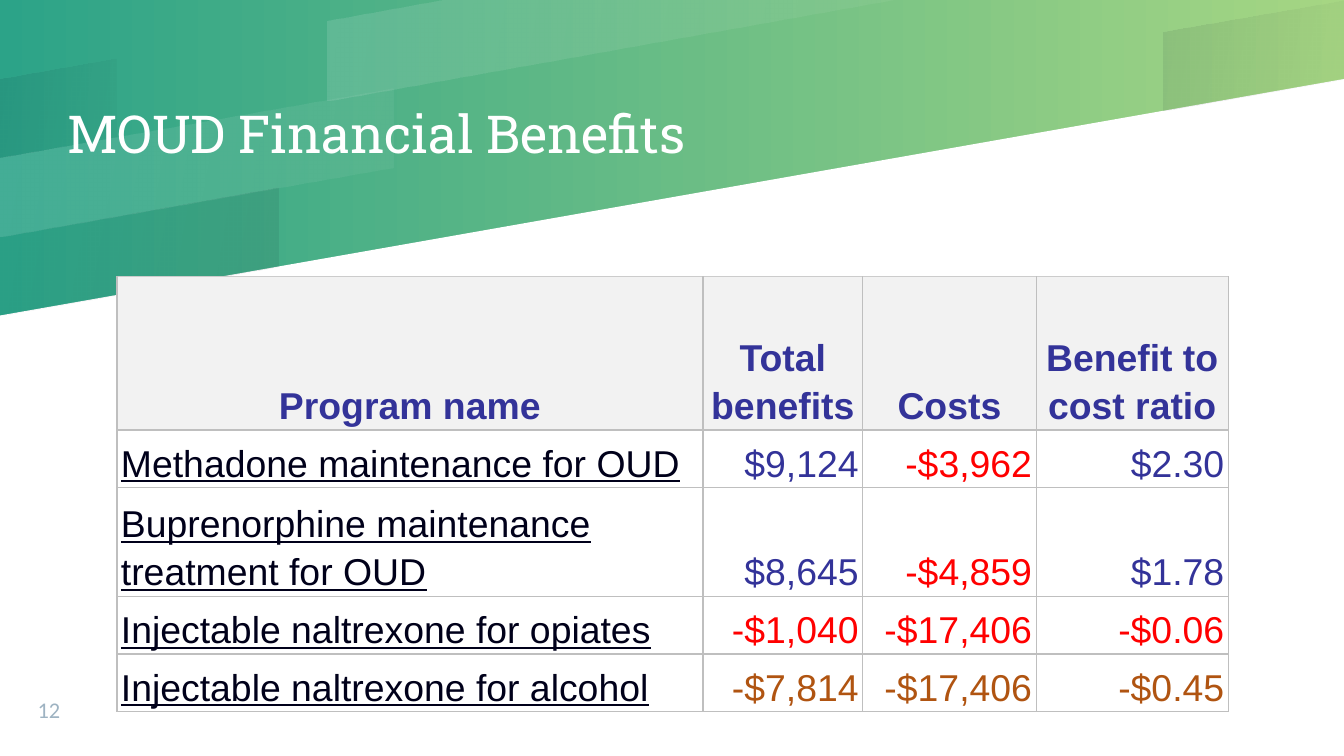
from pptx import Presentation
from pptx.dml.color import RGBColor
from pptx.enum.text import MSO_ANCHOR, PP_ALIGN
from pptx.oxml import parse_xml
from pptx.oxml.ns import nsdecls
from pptx.util import Inches, Pt
from lxml.etree import SubElement

# Content
TITLE = "MOUD Financial Benefits"
PAGE = "12"
HEADERS = ["Program name", "Total benefits", "Costs", "Benefit to cost ratio"]
PROGRAMS = [
    ("Methadone maintenance for OUD", "$9,124", "-$3,962", "$2.30"),
    ("Buprenorphine maintenance treatment for OUD", "$8,645", "-$4,859", "$1.78"),
    ("Injectable naltrexone for opiates", "-$1,040", "-$17,406", "-$0.06"),
    ("Injectable naltrexone for alcohol", "-$7,814", "-$17,406", "-$0.45"),
]

TEAL = RGBColor(0x2C, 0xA3, 0x88)
LIME = RGBColor(0xA6, 0xD6, 0x83)
WHITE = RGBColor(0xFF, 0xFF, 0xFF)
INK = RGBColor(0x00, 0x00, 0x1A)
NAVY = RGBColor(0x33, 0x33, 0x99)
RED = RGBColor(0xFF, 0x00, 0x00)
BROWN = RGBColor(0xB0, 0x54, 0x11)
PALE = RGBColor(0xF2, 0xF2, 0xF2)
GREY_BLUE = RGBColor(0x9E, 0xB3, 0xC2)
RULE, TOP_RULE = "BFBFBF", "CCCCCC"

# Sizes in inches
WIDTH, HEIGHT = 10, 5.625
LANE, SLOPE = 0.587, 0.176   # diagonal lanes rising to the right
COLS = [4.36, 1.19, 1.29, 1.43]
ROWS = [1.14, 0.43, 0.79, 0.43, 0.43]

# Diagonal bands: lane, left, right, colour, opacity % at both ends
BANDS = [
    (1, 2.44, 6.65, WHITE, (12, 5)),
    (1, 0, 0.87, INK, (8, 2)),
    (3, 0, 2.07, INK, (2, 8)),
    (3, 8.66, WIDTH, INK, (8, 2)),
    (2, 0, 2.93, WHITE, (12, 5)),
]


def write(tf, text, size=20, font="Arial", color=NAVY, bold=False,
          underline=False, align=PP_ALIGN.LEFT, spacing=1.0):
    p = tf.paragraphs[0]
    p.alignment, p.line_spacing = align, spacing
    r = p.add_run()
    r.text = text
    r.font.size, r.font.name = Pt(size), font
    r.font.bold, r.font.underline = bold, underline
    r.font.color.rgb = color
    return r


def set_frame(tf, anchor):
    tf.word_wrap = True
    tf.vertical_anchor = anchor
    tf.margin_left = tf.margin_right = tf.margin_top = tf.margin_bottom = 0


def set_gradient(fill, colors, angle):
    fill.gradient()
    fill.gradient_angle = angle
    for stop, color in zip(fill.gradient_stops, colors):
        stop.color.rgb = color


def lane_y(lane, x):
    return max(0, lane * LANE - SLOPE * x)


def draw_polygon(s, points):
    points = [(Inches(x), Inches(y)) for x, y in points]
    builder = s.shapes.build_freeform(*points[0])
    builder.add_line_segments(points[1:], close=True)
    sp = builder.convert_to_shape()
    sp.shadow.inherit = False
    sp.line.fill.background()
    return sp


def draw_band(s, lane, left, right, color, opacities):
    bend = min(right, lane * LANE / SLOPE)   # upper edge meets the slide top
    sp = draw_polygon(s, [
        (left, lane_y(lane, left)), (bend, lane_y(lane, bend)),
        (right, lane_y(lane, right)), (right, lane_y(lane + 1, right)),
        (left, lane_y(lane + 1, left))])
    set_gradient(sp.fill, (color, color), 350)
    for clr, opacity in zip(sp.fill._xPr.xpath(".//a:gs/a:srgbClr"), opacities):
        SubElement(clr, clr.tag.replace("srgbClr", "alpha"), val=str(opacity * 1000))


def set_borders(cell, top):
    tcPr = cell._tc.get_or_add_tcPr()
    for i, side in enumerate("LRTB"):
        color = top if side == "T" else RULE
        tcPr.insert(i, parse_xml(
            f'<a:ln{side} {nsdecls("a")} w="{Pt(0.75)}"><a:solidFill>'
            f'<a:srgbClr val="{color}"/></a:solidFill></a:ln{side}>'))


def number_color(row, text):
    if not text.startswith("-"):
        return NAVY
    return BROWN if row == len(PROGRAMS) else RED


prs = Presentation()
prs.slide_width, prs.slide_height = Inches(WIDTH), Inches(HEIGHT)
s = prs.slides.add_slide(prs.slide_layouts[5])

# Backdrop
set_gradient(s.background.fill, (TEAL, LIME), 0)
sheet = draw_polygon(s, [(0, HEIGHT), (WIDTH, HEIGHT),
                         (WIDTH, lane_y(4, WIDTH)), (0, lane_y(4, 0))])
sheet.fill.solid()
sheet.fill.fore_color.rgb = WHITE
for band in BANDS:
    draw_band(s, *band)

# Title, brought in front of the bands, with a soft text shadow
title = s.shapes.title
s.shapes._spTree.append(title._element)
title.left, title.top = Inches(0.5), 0
title.width, title.height = Inches(6), Inches(1.98)
set_frame(title.text_frame, MSO_ANCHOR.MIDDLE)
r = write(title.text_frame, TITLE, size=28, font="Roboto Slab", color=WHITE)
r.font._rPr.insert(1, parse_xml(
    f'<a:effectLst {nsdecls("a")}><a:outerShdw blurRad="38100" dist="19050" '
    'dir="2700000"><a:srgbClr val="00001A"><a:alpha val="30000"/></a:srgbClr>'
    '</a:outerShdw></a:effectLst>'))

# Page number
box = s.shapes.add_textbox(Inches(0.28), Inches(5.11), Inches(0.53), Inches(0.27))
set_frame(box.text_frame, MSO_ANCHOR.BOTTOM)
write(box.text_frame, PAGE, size=12, font="Calibri", color=GREY_BLUE)

# Table
table = s.shapes.add_table(len(ROWS), len(COLS), Inches(0.87), Inches(2.06),
                           Inches(sum(COLS)), Inches(sum(ROWS))).table
for column, width in zip(table.columns, COLS):
    column.width = Inches(width)
for row, height in zip(table.rows, ROWS):
    row.height = Inches(height)

for i, values in enumerate([HEADERS, *PROGRAMS]):
    for j, text in enumerate(values):
        cell = table.cell(i, j)
        cell.vertical_anchor = MSO_ANCHOR.BOTTOM
        cell.margin_left = cell.margin_right = Inches(0.03)
        cell.margin_top = cell.margin_bottom = Inches(0.02)
        cell.fill.solid()
        cell.fill.fore_color.rgb = WHITE if i else PALE
        set_borders(cell, RULE if i else TOP_RULE)
        if i == 0:
            style = dict(bold=True, align=PP_ALIGN.CENTER)
        elif j == 0:
            style = dict(color=INK, underline=True)
        else:
            style = dict(color=number_color(i, text), align=PP_ALIGN.RIGHT)
        write(cell.text_frame, text, spacing=1.15, **style)

prs.save("out.pptx")
